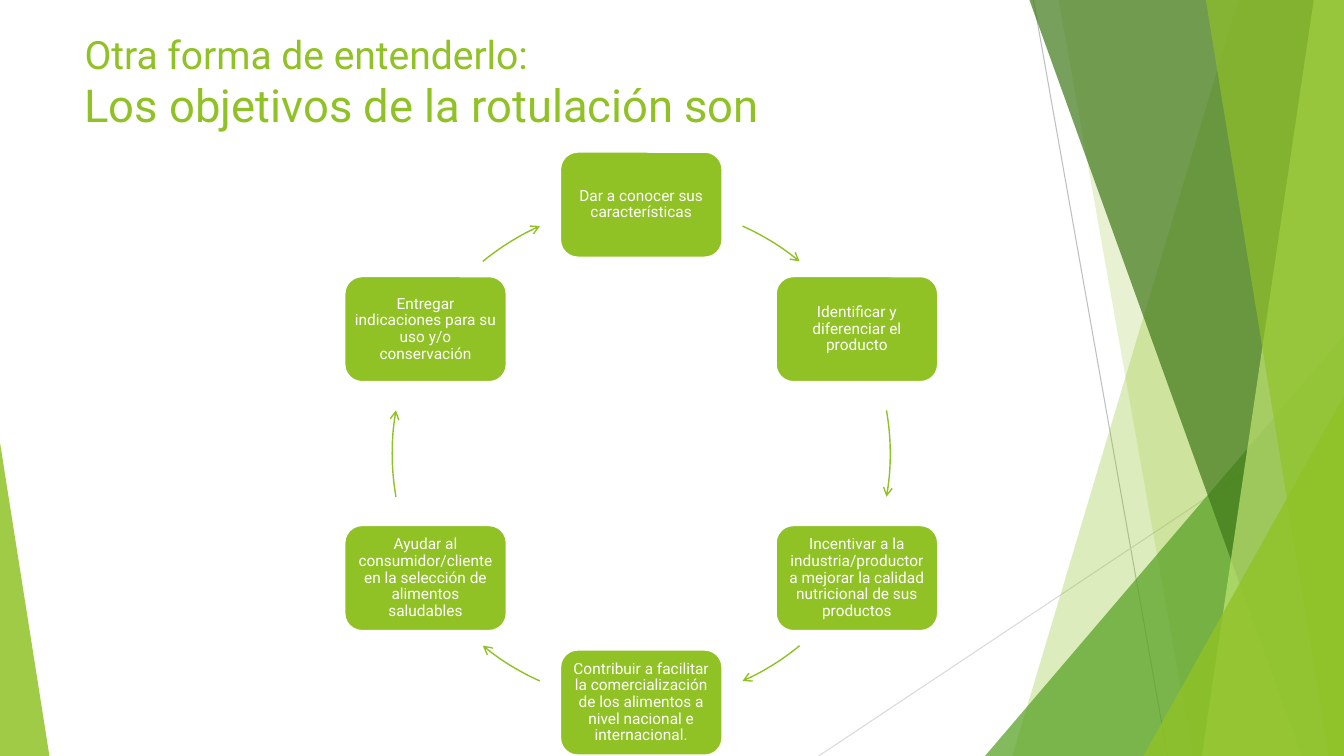
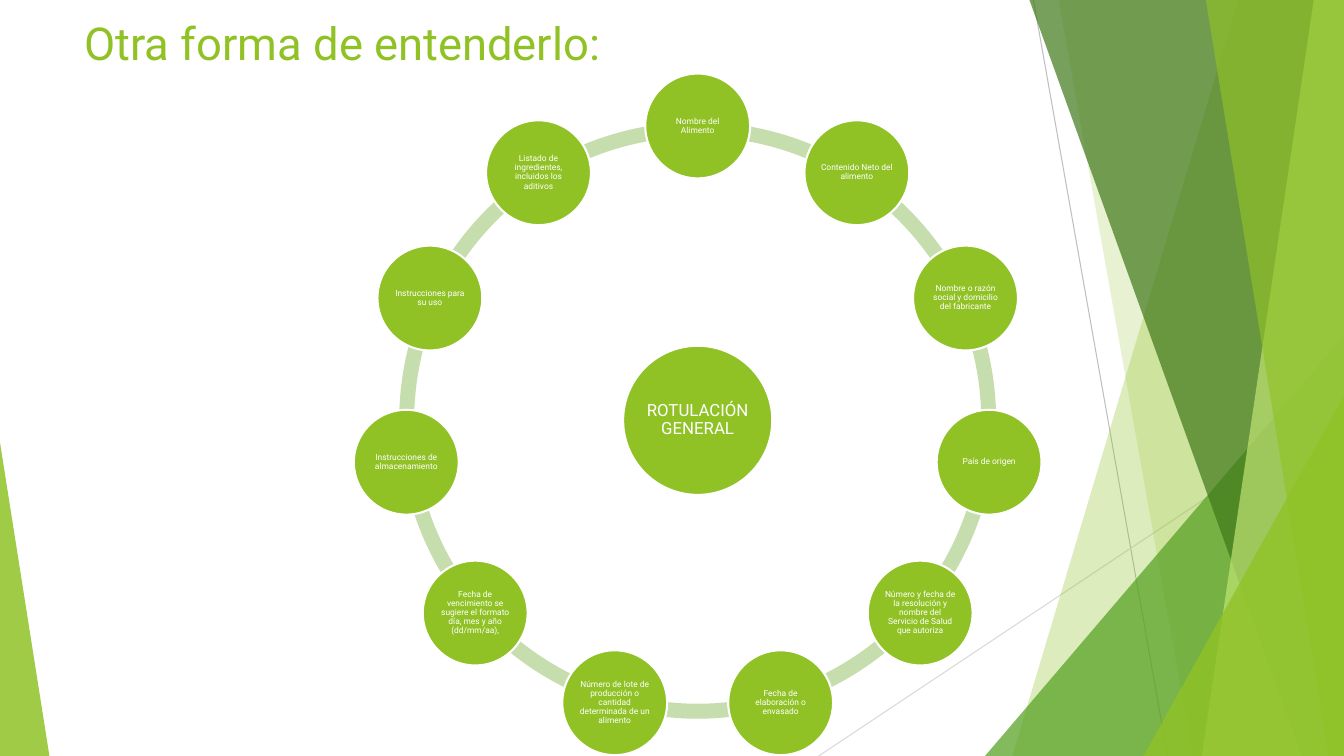
from math import cos, radians, sin
from typing import NamedTuple

from lxml import etree
from pptx import Presentation
from pptx.dml.color import RGBColor
from pptx.enum.shapes import MSO_CONNECTOR, MSO_SHAPE
from pptx.enum.text import MSO_ANCHOR, PP_ALIGN
from pptx.oxml.ns import qn
from pptx.shapes.autoshape import Shape
from pptx.slide import Slide
from pptx.util import Inches, Pt

ARC = MSO_SHAPE.ARC
BAND = MSO_SHAPE.BLOCK_ARC
BOX = MSO_SHAPE.ROUNDED_RECTANGLE
DISC = MSO_SHAPE.OVAL
WEDGE = MSO_SHAPE.ISOSCELES_TRIANGLE
LINE = MSO_CONNECTOR.STRAIGHT
MIDDLE = MSO_ANCHOR.MIDDLE
CENTER = PP_ALIGN.CENTER

GREEN = RGBColor(0x90, 0xC2, 0x26)
LEAF = RGBColor(0x54, 0xA0, 0x21)
DARK = RGBColor(0x3F, 0x78, 0x19)
LIME = RGBColor(0xC0, 0xE4, 0x74)
PALE = RGBColor(0xC6, 0xDD, 0xAD)
GRAY = RGBColor(0xBF, 0xBF, 0xBF)
SILVER = RGBColor(0xD9, 0xD9, 0xD9)
WHITE = RGBColor(0xFF, 0xFF, 0xFF)

FONT = "Roboto"
WIDE, HIGH = 13.33, 7.5
SMALL, LARGE = 27.9, 32.4


class Ray(NamedTuple):
    start: tuple[float, float]
    end: tuple[float, float]
    color: RGBColor


class Shard(NamedTuple):
    """Band reaching the right edge; its left side runs from top to foot."""
    top: float
    foot: float
    color: RGBColor
    alpha: int


class Corner(NamedTuple):
    """Right triangle on the bottom edge; peak is 0 (left) or 1 (right)."""
    left: float
    top: float
    width: float
    peak: int
    color: RGBColor
    alpha: int


class Ring(NamedTuple):
    x: float
    y: float
    radius: float

    def point(self, angle: float) -> tuple[float, float]:
        """Point at an angle in degrees, clockwise from the top."""
        turn = radians(angle)
        return self.x + self.radius * sin(turn), self.y - self.radius * cos(turn)


class Style(NamedTuple):
    kind: MSO_SHAPE
    width: float
    height: float
    size: float
    inset: float


class Line(NamedTuple):
    text: str
    size: float


RAYS = (
    Ray((10.25, 0), (11.58, HIGH), GRAY),
    Ray((WIDE, 4.03), (8.12, HIGH), SILVER),
)
DECOR = (
    Shard(12.28, 10.04, GREEN, 30),
    Shard(10.5, 11.83, GREEN, 20),
    Corner(9.77, 3.33, 3.56, 1, LEAF, 72),
    Shard(10.21, 12.91, DARK, 70),
    Shard(13.03, 11.92, LIME, 70),
    Shard(11.96, 13.18, GREEN, 65),
    Corner(11.34, 3.93, 1.99, 1, GREEN, 80),
    Corner(0, 4.39, 0.49, 0, GREEN, 85),
)

CYCLE = Ring(6.36, 4.5, 2.47)
GOAL = Style(BOX, 1.61, 1.05, 11, 0.05)
GOALS = (
    "Dar a conocer sus características",
    "Identificar y diferenciar el producto",
    "Incentivar a la industria/productor a mejorar la calidad nutricional de sus productos",
    "Contribuir a facilitar la comercialización de los alimentos a nivel nacional e internacional.",
    "Ayudar al consumidor/cliente en la selección de alimentos saludables",
    "Entregar indicaciones para su uso y/o conservación",
)
ARROWS = ((24, 39.5), (80, 100), (140.5, 156), (204, 219.5), (260, 280), (320.5, 336))

WHEEL = Ring(6.92, 4.17, 2.92)
RIM = 2.96
HUB = Style(DISC, 1.48, 1.48, 12, 0)
FACT = Style(DISC, 1.04, 1.04, 6, 0.01)
FACTS = (
    "Nombre del Alimento",
    "Contenido Neto del alimento",
    "Nombre o razón social y domicilio del fabricante",
    "País de origen",
    "Número y fecha de la resolución y nombre del Servicio de Salud que autoriza",
    "Fecha de elaboración o envasado",
    "Número de lote de producción o cantidad determinada de un alimento",
    "Fecha de vencimiento se sugiere el formato día, mes y año (dd/mm/aa),",
    "Instrucciones de almacenamiento",
    "Instrucciones para su uso",
    "Listado de ingredientes, incluidos los aditivos",
)


def paint(shape: Shape, color: RGBColor, alpha: int = 100) -> None:
    """Give a flat fill without outline or shadow."""
    shape.shadow.inherit = False
    shape.fill.solid()
    shape.fill.fore_color.rgb = color
    shape.line.fill.background()
    if alpha < 100:
        tint = shape.element.spPr.find(qn("a:solidFill")).find(qn("a:srgbClr"))
        etree.SubElement(tint, qn("a:alpha")).set("val", str(alpha * 1000))


def draw_ray(slide: Slide, ray: Ray) -> None:
    ends = [Inches(v) for v in (*ray.start, *ray.end)]
    line = slide.shapes.add_connector(LINE, *ends)
    line.line.color.rgb = ray.color
    line.line.width = Pt(0.75)
    etree.SubElement(line.element.spPr, qn("a:effectLst"))


def draw_shard(slide: Slide, shard: Shard) -> None:
    spots = [(shard.top, 0), (WIDE, 0), (WIDE, HIGH), (shard.foot, HIGH)]
    first, *rest = [(Inches(x), Inches(y)) for x, y in spots]
    path = slide.shapes.build_freeform(*first)
    path.add_line_segments(rest, close=True)
    paint(path.convert_to_shape(), shard.color, shard.alpha)


def draw_corner(slide: Slide, corner: Corner) -> None:
    shape = slide.shapes.add_shape(
        WEDGE, Inches(corner.left), Inches(corner.top),
        Inches(corner.width), Inches(HIGH - corner.top))
    shape.adjustments[0] = corner.peak
    paint(shape, corner.color, corner.alpha)


def add_title(slide: Slide, top: float, height: float, *lines: Line) -> None:
    box = slide.shapes.add_textbox(
        Inches(0.74), Inches(top), Inches(9.4), Inches(height))
    frame = box.text_frame
    frame.word_wrap = True
    frame.vertical_anchor = MIDDLE
    for i, line in enumerate(lines):
        para = frame.add_paragraph() if i else frame.paragraphs[0]
        para.text = line.text
        para.font.name = FONT
        para.font.size = Pt(line.size)
        para.font.color.rgb = GREEN


def add_node(slide: Slide, x: float, y: float, text: str, style: Style) -> None:
    """Draw a labelled shape centred on x, y."""
    shape = slide.shapes.add_shape(
        style.kind, Inches(x - style.width / 2), Inches(y - style.height / 2),
        Inches(style.width), Inches(style.height))
    paint(shape, GREEN)
    shape.line.color.rgb = WHITE
    shape.line.width = Pt(1.5)
    frame = shape.text_frame
    frame.word_wrap = True
    frame.vertical_anchor = MIDDLE
    frame.margin_left = frame.margin_right = Inches(style.inset)
    frame.margin_top = frame.margin_bottom = Inches(style.inset)
    para = frame.paragraphs[0]
    para.text = text
    para.alignment = CENTER
    para.line_spacing = 0.9
    para.font.name = FONT
    para.font.size = Pt(style.size)
    para.font.color.rgb = WHITE


def add_arc(slide: Slide, kind: MSO_SHAPE, ring: Ring,
            start: float, end: float) -> Shape:
    """Add an arc shape between two angles, clockwise from the top."""
    side = Inches(2 * ring.radius)
    shape = slide.shapes.add_shape(
        kind, Inches(ring.x - ring.radius), Inches(ring.y - ring.radius), side, side)
    for i, angle in enumerate((start, end)):
        # One degree is 60000 units; an adjustment of 1 is 100000 units.
        shape.adjustments[i] = (angle - 90) % 360 * 0.6
    return shape


def add_arrow(slide: Slide, start: float, end: float) -> None:
    shape = add_arc(slide, ARC, CYCLE, start, end)
    shape.shadow.inherit = False
    shape.fill.background()
    shape.line.color.rgb = GREEN
    shape.line.width = Pt(1)
    outline = shape.element.spPr.find(qn("a:ln"))
    etree.SubElement(outline, qn("a:tailEnd")).set("type", "arrow")


def add_slide(deck: Presentation) -> Slide:
    """Add a blank slide with the shared background."""
    slide = deck.slides.add_slide(deck.slide_layouts[6])
    for ray in RAYS:
        draw_ray(slide, ray)
    for piece in DECOR:
        if isinstance(piece, Shard):
            draw_shard(slide, piece)
        else:
            draw_corner(slide, piece)
    return slide


def add_nodes(slide: Slide, ring: Ring, texts: tuple[str, ...], style: Style) -> None:
    """Spread nodes evenly round a ring, from the top."""
    for i, text in enumerate(texts):
        add_node(slide, *ring.point(i * 360 / len(texts)), text, style)


def add_goals(deck: Presentation) -> None:
    slide = add_slide(deck)
    add_title(slide, 0.23, 1.14, Line("Otra forma de entenderlo:", SMALL),
              Line("Los objetivos de la rotulación son", LARGE))
    for start, end in ARROWS:
        add_arrow(slide, start, end)
    add_nodes(slide, CYCLE, GOALS, GOAL)


def add_facts(deck: Presentation) -> None:
    slide = add_slide(deck)
    add_title(slide, 0.11, 0.62, Line("Otra forma de entenderlo:", LARGE))
    step = 360 / len(FACTS)
    rim = WHEEL._replace(radius=RIM)
    for i in range(len(FACTS)):
        band = add_arc(slide, BAND, rim, i * step, (i + 1) * step)
        band.adjustments[2] = 0.025
        paint(band, PALE)
    add_node(slide, WHEEL.x, WHEEL.y, "ROTULACIÓN GENERAL", HUB)
    add_nodes(slide, WHEEL, FACTS, FACT)


def main() -> None:
    deck = Presentation()
    deck.slide_width, deck.slide_height = Inches(WIDE), Inches(HIGH)
    add_goals(deck)
    add_facts(deck)
    deck.save("out.pptx")


if __name__ == "__main__":
    main()
